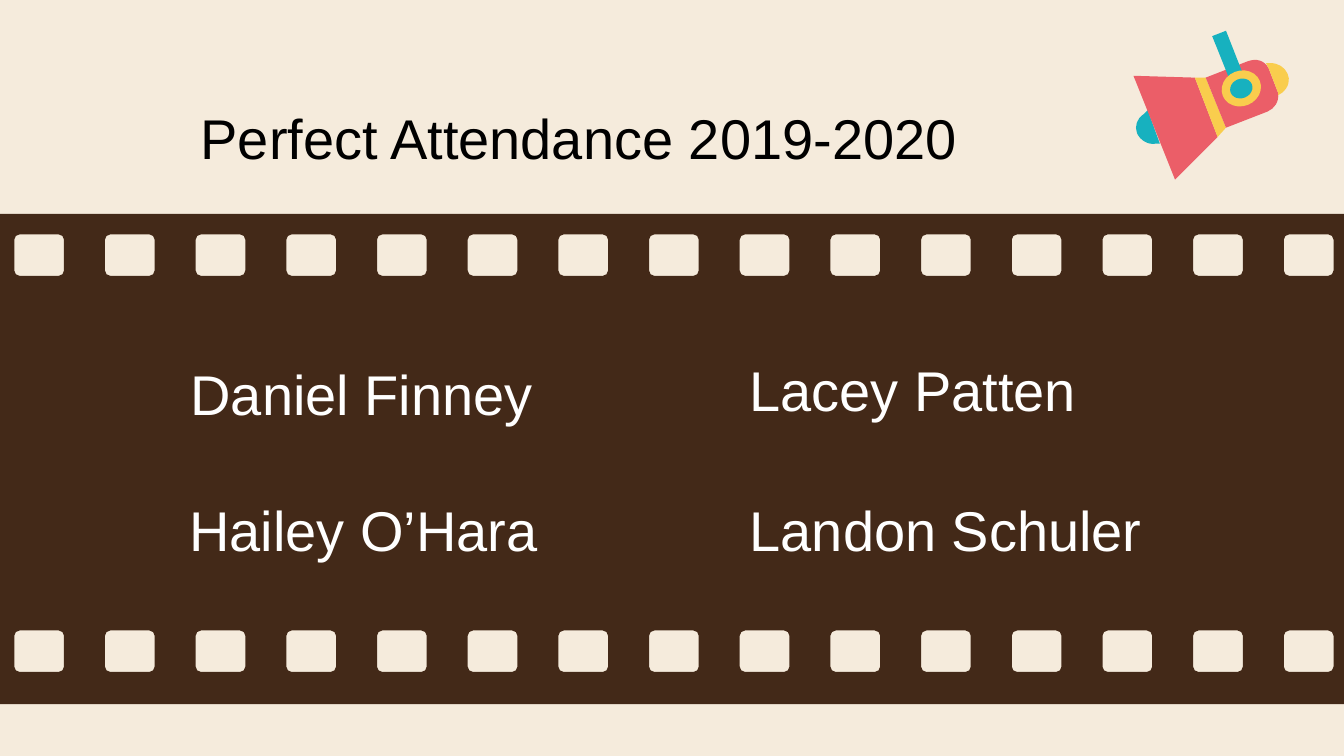
import itertools

import pptx
import pptx.util
import pptx.dml.color
import pptx.enum.shapes
import pptx.enum.text
import pptx.oxml.ns

Pt = pptx.util.Pt
RGBColor = pptx.dml.color.RGBColor
qn = pptx.oxml.ns.qn

CREAM = RGBColor(0xF5, 0xEB, 0xDC)
BROWN = RGBColor(0x43, 0x29, 0x18)
TEAL = RGBColor(0x17, 0xB1, 0xBF)
CORAL = RGBColor(0xEB, 0x5E, 0x68)
YELLOW = RGBColor(0xF9, 0xCD, 0x4D)
BLACK = RGBColor(0, 0, 0)
WHITE = RGBColor(0xFF, 0xFF, 0xFF)

WIDTH, HEIGHT = 720, 405

# Text, colour, box (left, top, width, height)
TEXTS = [
    ("Perfect Attendance 2019-2020", BLACK, (100.4, 48.2, 478.8, 51)),
    ("Daniel Finney", WHITE, (95, 185.4, 265, 42)),
    ("Hailey O’Hara", WHITE, (94.3, 258.5, 265.7, 41)),
    ("Lacey Patten", WHITE, (394.5, 183.2, 232, 47)),
    ("Landon Schuler", WHITE, (394.5, 258.5, 253, 41)),
]

FILM_TOP, FILM_BOTTOM = 114.6, 377.2
HOLE_COUNT, HOLE_LEFT, HOLE_PITCH = 15, 7.7, 48.58
HOLE_WIDTH, HOLE_HEIGHT, HOLE_RADIUS = 26.6, 22.2, 2.8
HOLE_TOPS = (125.6, 337.8)

# Outlines: a pair is a corner, six numbers are a Bezier curve
SPOTLIGHT_PARTS = [
    (TEAL, [(614.9, 59), (621.4, 77), (619.2, 77),
            (614.9, 77.8, 610.6, 74.9, 609.1, 71.3),
            (607.7, 67.7, 609.1, 63.4, 612.7, 61.2)]),
    (CORAL, [(607.2, 40.6), (640.1, 41.6), (652.3, 73.4), (629.5, 96.3)]),
    (YELLOW, [(640.1, 41.6), (645.9, 41.6), (656.8, 68.4), (652.3, 73.4)]),
    (CORAL, [(645.9, 41.6), (668.2, 32.9),
             (673.2, 31, 677.5, 32.4, 679.7, 36.7), (684.7, 49.7),
             (685.4, 54.7, 682.6, 58.3, 679, 59.8), (656.8, 68.4)]),
    (TEAL, [(656.8, 16.5), (665.3, 38.2), (658.1, 41), (649.4, 19.4)]),
    (YELLOW, [(678.2, 33.8), (680.4, 33.8),
              (684.7, 33.8, 688.3, 36, 689.8, 39.6),
              (691.2, 42.5, 690.5, 46.8, 686.9, 49.7),
              (684.7, 51.1), (684.7, 49.7), (679.7, 36.7)]),
]
LENS_CENTER = (665, 47.4)
LENS_RINGS = [(YELLOW, 21.4, 19), (TEAL, 12.2, 10.4)]
TILT = -21.8


def paint(shape, color):
    shape.fill.solid()
    shape.fill.fore_color.rgb = color
    shape.line.fill.background()
    shape.shadow.inherit = False


def add_outline(shapes, color, contours):
    """Draw closed contours of corners and curves as one shape."""
    builder = shapes.build_freeform(*map(Pt, contours[0][0]))
    point_counts = []
    for index, (start, *segments) in enumerate(contours):
        if index:
            builder.move_to(*map(Pt, start))
        points = [(Pt(x), Pt(y)) for segment in segments
                  for x, y in zip(segment[::2], segment[1::2])]
        builder.add_line_segments(points, close=True)
        point_counts += [len(segment) // 2 for segment in segments]
    shape = builder.convert_to_shape()
    lines = iter(list(shape._element.iter(qn("a:lnTo"))))
    for count in point_counts:
        first, *others = itertools.islice(lines, count)
        if others:
            first.tag = qn("a:cubicBezTo")
        for other in others:
            first.append(other[0])
            other.getparent().remove(other)
    paint(shape, color)


def hole_outline(left, top):
    """Rounded rectangle whose corners curve towards the outer edge points."""
    right, bottom, r = left + HOLE_WIDTH, top + HOLE_HEIGHT, HOLE_RADIUS
    k = r * 0.45
    return [
        (left + r, top), (right - r, top),
        (right - k, top, right, top + k, right, top + r), (right, bottom - r),
        (right, bottom - k, right - k, bottom, right - r, bottom), (left + r, bottom),
        (left + k, bottom, left, bottom - k, left, bottom - r), (left, top + r),
        (left, top + k, left + k, top, left + r, top),
    ]


def add_film(slide):
    strip = [(0, FILM_TOP), (WIDTH, FILM_TOP), (WIDTH, FILM_BOTTOM), (0, FILM_BOTTOM)]
    holes = [hole_outline(HOLE_LEFT + column * HOLE_PITCH, top)
             for top in HOLE_TOPS for column in range(HOLE_COUNT)]
    add_outline(slide.shapes, BROWN, [strip, *holes])


def add_spotlight(slide):
    spotlight = slide.shapes.add_group_shape().shapes
    for color, outline in SPOTLIGHT_PARTS:
        add_outline(spotlight, color, [outline])
    center_x, center_y = LENS_CENTER
    for color, width, height in LENS_RINGS:
        ring = spotlight.add_shape(
            pptx.enum.shapes.MSO_SHAPE.OVAL,
            Pt(center_x - width / 2), Pt(center_y - height / 2), Pt(width), Pt(height))
        ring.rotation = TILT
        paint(ring, color)


def add_text(slide, text, color, box):
    frame = slide.shapes.add_textbox(*map(Pt, box)).text_frame
    settings = {"word_wrap": True, "vertical_anchor": pptx.enum.text.MSO_ANCHOR.TOP}
    for side in ("left", "top", "right", "bottom"):
        settings[f"margin_{side}"] = Pt(7.2)
    for name, value in settings.items():
        setattr(frame, name, value)
    run = frame.paragraphs[0].add_run()
    run.text = text
    run.font.name = "Arial"
    run.font.size = Pt(30)
    run.font.color.rgb = color


def main():
    deck = pptx.Presentation()
    deck.slide_width, deck.slide_height = Pt(WIDTH), Pt(HEIGHT)
    slide = deck.slides.add_slide(deck.slide_layouts[6])
    slide.background.fill.solid()
    slide.background.fill.fore_color.rgb = CREAM
    add_film(slide)
    add_spotlight(slide)
    for text, color, box in TEXTS:
        add_text(slide, text, color, box)
    deck.save("out.pptx")


if __name__ == "__main__":
    main()
